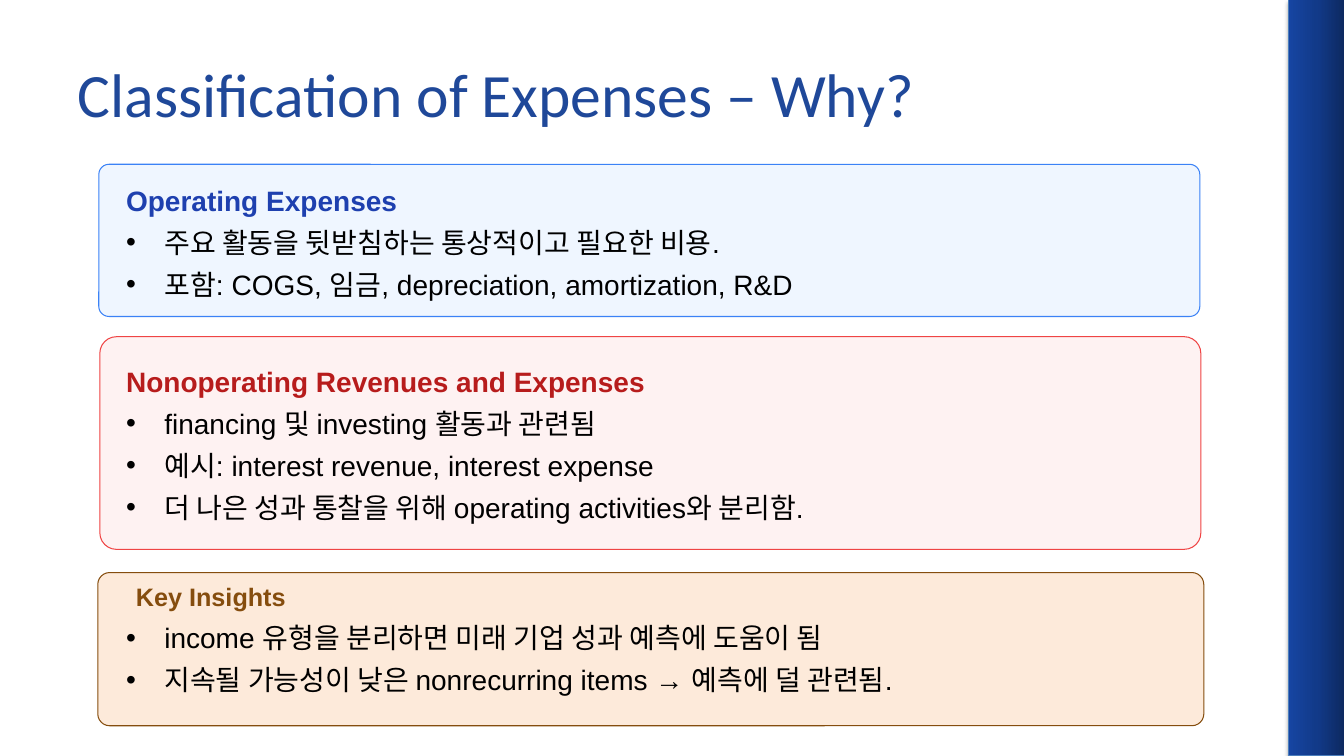
from copy import deepcopy
from dataclasses import dataclass

from lxml import etree
from pptx import Presentation
from pptx import util as u
from pptx.dml.color import RGBColor
from pptx.enum import shapes, text
from pptx.oxml import ns

Box = tuple[float, float, float, float]


@dataclass
class Label:
    words: str
    size: int
    hue: str
    bold: bool = False
    bullet: bool = False
    lead: int = 0  # exact line height in points
    before: int = 0
    after: int = 0


@dataclass
class Card:
    box: Box
    round: float
    fill: str
    line: str


@dataclass
class Block:
    box: Box
    rows: list[Label]
    pad: bool = False


def color(code: str) -> RGBColor:
    return RGBColor.from_string(code)


def place(box: Box) -> list[u.Length]:
    return [u.Inches(n) for n in box]


def sub(node, tag: str, **attrs: str):
    return etree.SubElement(node, ns.qn(tag), attrs)


def point(words: str, lead: int = 0, before: int = 0) -> Label:
    return Label(words, 20, "000000", bullet=True, lead=lead, before=before)


def add_bar(slide) -> None:
    bar = slide.shapes.add_shape(
        shapes.MSO_SHAPE.RECTANGLE, *place((12.78, 0, 0.56, 7.5)))
    bar.line.color.rgb = color("4B7EBC")
    bar.line.width = u.Pt(0.75)
    bar.fill.gradient()
    bar.fill.gradient_angle = 180
    first = bar._element.spPr.find(".//" + ns.qn("a:gs"))
    first.addnext(deepcopy(first))
    hues = ("0D2960", "123A89", "1645A2")
    for i, (stop, hue) in enumerate(zip(bar.fill.gradient_stops, hues)):
        stop.color.rgb = color(hue)
        stop.position = i / 2
    bar.shadow.inherit = False
    effect = bar._element.spPr.find(ns.qn("a:effectLst"))
    shade = sub(effect, "a:outerShdw", blurRad=str(u.Pt(3.1)),
                dist=str(u.Pt(1.8)), dir="5400000", rotWithShape="0")
    sub(sub(shade, "a:srgbClr", val="000000"), "a:alpha", val="35000")


def add_card(slide, card: Card) -> None:
    shape = slide.shapes.add_shape(
        shapes.MSO_SHAPE.ROUNDED_RECTANGLE, *place(card.box))
    shape.adjustments[0] = card.round
    shape.shadow.inherit = False
    shape.fill.solid()
    shape.fill.fore_color.rgb = color(card.fill)
    shape.line.color.rgb = color(card.line)
    shape.line.width = u.Pt(0.75)


def write(para, row: Label, face: str = "Arial") -> None:
    if row.bullet:
        props = para._p.get_or_add_pPr()
        props.set("marL", str(u.Inches(0.38)))
        props.set("indent", str(u.Inches(-0.38)))
        sub(props, "a:buFont", typeface="Arial")
        sub(props, "a:buChar", char="•")
    if row.lead:
        para.line_spacing = u.Pt(row.lead)
    if row.before:
        para.space_before = u.Pt(row.before)
    if row.after:
        para.space_after = u.Pt(row.after)
    run = para.add_run()
    run.text = row.words
    run.font.name = face
    run.font.size = u.Pt(row.size)
    run.font.bold = row.bold
    run.font.color.rgb = color(row.hue)


def add_block(slide, block: Block) -> None:
    frame = slide.shapes.add_textbox(*place(block.box)).text_frame
    frame.word_wrap = True
    if not block.pad:
        frame.margin_left = frame.margin_right = 0
        frame.margin_top = frame.margin_bottom = 0
    for i, row in enumerate(block.rows):
        write(frame.add_paragraph() if i else frame.paragraphs[0], row)


CARDS = [
    Card((0.98, 1.63, 10.92, 1.51), 0.067, "EFF6FF", "3B82F6"),
    Card((0.99, 3.34, 10.92, 2.11), 0.078, "FEF2F2", "EF4444"),
    Card((0.97, 5.68, 10.97, 1.52), 0.078, "FDEADA", "854D0E"),
]
BLOCKS = [
    Block((1.25, 1.82, 10.48, 1.11), [
        Label("Operating Expenses", 20, "1E40AF", bold=True),
        point("주요 활동을 뒷받침하는 통상적이고 필요한 비용.", lead=30),
        point("포함: COGS, 임금, depreciation, amortization, R&D", lead=30),
    ]),
    Block((1.25, 3.53, 10.48, 1.56), [
        Label("Nonoperating Revenues and Expenses", 20, "B71C1C",
              bold=True, lead=30),
        point("financing 및 investing 활동과 관련됨", lead=30),
        point("예시: interest revenue, interest expense", lead=30),
        point("더 나은 성과 통찰을 위해 operating activities와 분리함.", lead=30),
    ]),
    Block((1.25, 5.72, 6.7, 0.4), [
        Label("Key Insights", 18, "854D0E", bold=True, after=8),
    ], pad=True),
    Block((1.25, 6.16, 10.35, 0.9), [
        point("income 유형을 분리하면 미래 기업 성과 예측에 도움이 됨"),
        point("지속될 가능성이 낮은 nonrecurring items → 예측에 덜 관련됨.",
              before=6),
    ]),
]


def main() -> None:
    deck = Presentation()
    deck.slide_width, deck.slide_height = u.Inches(13.33), u.Inches(7.5)
    slide = deck.slides.add_slide(deck.slide_layouts[5])
    title = slide.shapes.title
    title.left, title.top, title.width, title.height = place(
        (0.67, 0.3, 12, 1.25))
    title.text_frame.vertical_anchor = text.MSO_ANCHOR.MIDDLE
    head = title.text_frame.paragraphs[0]
    head.alignment = text.PP_ALIGN.LEFT
    write(head, Label("Classification of Expenses – Why?", 44, "1F4899"),
          "Calibri")
    add_bar(slide)
    for card in CARDS:
        add_card(slide, card)
    for block in BLOCKS:
        add_block(slide, block)
    deck.save("out.pptx")


if __name__ == "__main__":
    main()
